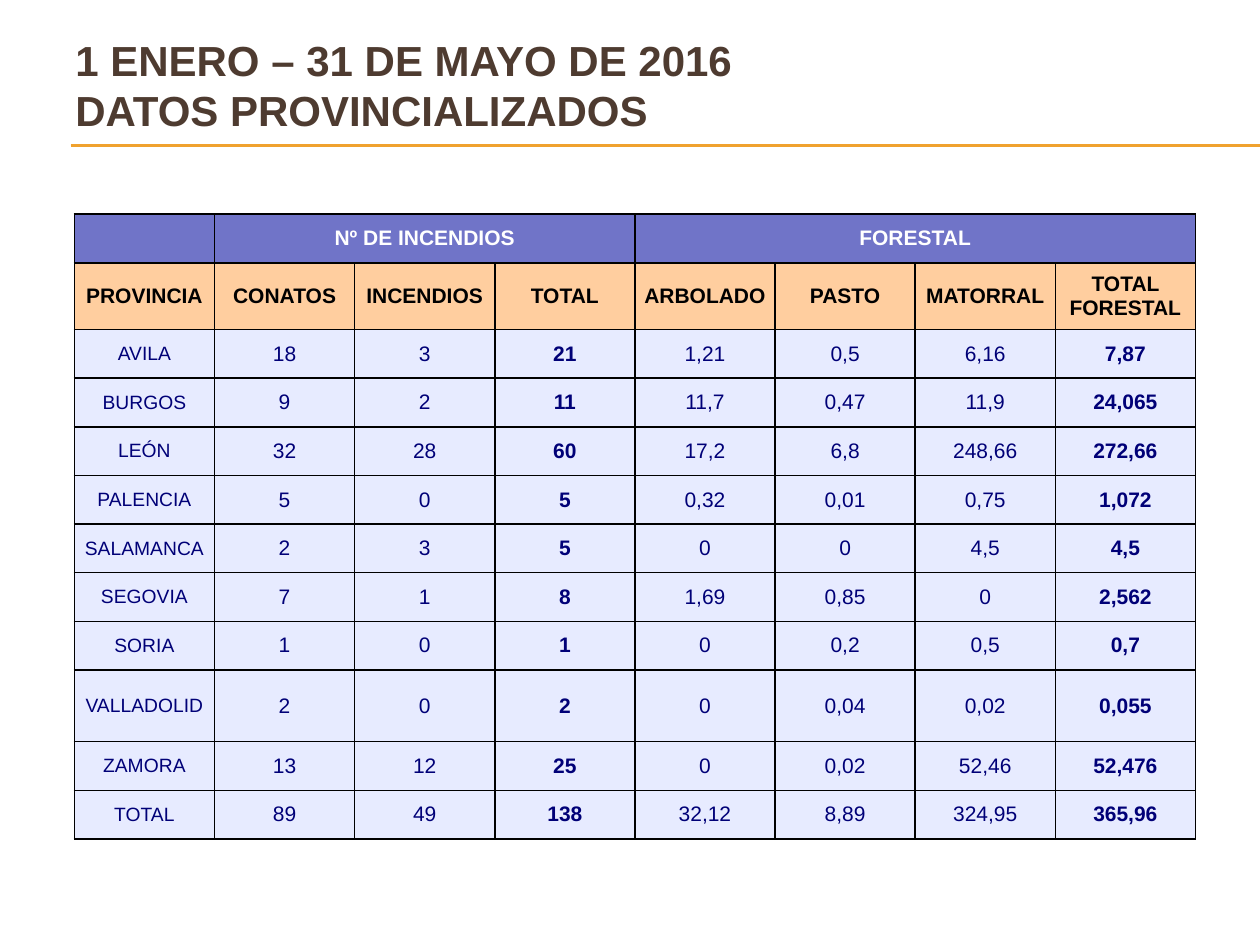
import pptx
import pptx.dml.color
import pptx.enum.shapes
import pptx.enum.text
import pptx.oxml.ns
import pptx.util
from lxml import etree

Inches, Pt = pptx.util.Inches, pptx.util.Pt
qn = pptx.oxml.ns.qn
MIDDLE = pptx.enum.text.MSO_ANCHOR.MIDDLE
CENTER = pptx.enum.text.PP_ALIGN.CENTER

TITLE = ["1 ENERO – 31 DE MAYO DE 2016", "DATOS PROVINCIALIZADOS"]
GROUPS = [("", 1), ("Nº DE INCENDIOS", 3), ("FORESTAL", 4)]
HEADS = ["PROVINCIA", "CONATOS", "INCENDIOS", "TOTAL",
         "ARBOLADO", "PASTO", "MATORRAL", "TOTAL FORESTAL"]
DATA = [
    ("AVILA", "18", "3", "21", "1,21", "0,5", "6,16", "7,87"),
    ("BURGOS", "9", "2", "11", "11,7", "0,47", "11,9", "24,065"),
    ("LEÓN", "32", "28", "60", "17,2", "6,8", "248,66", "272,66"),
    ("PALENCIA", "5", "0", "5", "0,32", "0,01", "0,75", "1,072"),
    ("SALAMANCA", "2", "3", "5", "0", "0", "4,5", "4,5"),
    ("SEGOVIA", "7", "1", "8", "1,69", "0,85", "0", "2,562"),
    ("SORIA", "1", "0", "1", "0", "0,2", "0,5", "0,7"),
    ("VALLADOLID", "2", "0", "2", "0", "0,04", "0,02", "0,055"),
    ("ZAMORA", "13", "12", "25", "0", "0,02", "52,46", "52,476"),
    ("TOTAL", "89", "49", "138", "32,12", "8,89", "324,95", "365,96"),
]
SUMS = (3, 7)                # bold columns
LEFT, TOP, WIDTH = 0.59, 1.7, 8.9
ROW = 0.386
TALL = {1: 0.53, 9: 0.57}    # rows that differ from ROW


def color(code):
    return pptx.dml.color.RGBColor.from_string(code)


def write(para, text, size, tint, bold):
    run = para.add_run()
    run.text = text
    font = run.font
    font.name, font.size, font.bold = "Arial", Pt(size), bold
    font.color.rgb = color(tint)


def rule(slide, y):
    line = slide.shapes.add_connector(
        pptx.enum.shapes.MSO_CONNECTOR.STRAIGHT,
        Inches(0.56), Inches(y), Inches(10), Inches(y))
    line.line.color.rgb = color("F0A22E")
    line.line.width = Pt(0.75)
    etree.SubElement(line._element.spPr, qn("a:effectLst"))


def frame(cell, tint="000000", width=1):
    """Draw the four borders of a cell."""
    props = cell._tc.get_or_add_tcPr()
    for side in ("a:lnL", "a:lnR", "a:lnT", "a:lnB"):
        edge = etree.SubElement(props, qn(side), w=str(Pt(width)))
        fill = etree.SubElement(edge, qn("a:solidFill"))
        etree.SubElement(fill, qn("a:srgbClr"), val=tint)


def style(cell, back):
    frame(cell)
    cell.fill.solid()
    cell.fill.fore_color.rgb = color(back)
    cell.vertical_anchor = MIDDLE
    cell.margin_left = cell.margin_right = 0
    cell.margin_top = cell.margin_bottom = 0


def put(cell, text, size, tint, bold):
    para = cell.text_frame.paragraphs[0]
    para.alignment = CENTER
    if text:
        write(para, text, size, tint, bold)


def add_title(slide):
    box = slide.shapes.add_textbox(
        Inches(0.5), Inches(0.21), Inches(9.5), Inches(0.92))
    body = box.text_frame
    body.word_wrap = True
    body.vertical_anchor = MIDDLE
    para = body.paragraphs[0]
    for i, text in enumerate(TITLE):
        if i:
            para.add_line_break()
        write(para, text, 24, "4E3B30", True)


def add_grid(slide):
    count = len(DATA) + 2
    highs = [TALL.get(r, ROW) for r in range(count)]
    grid = slide.shapes.add_table(
        count, len(HEADS), Inches(LEFT), Inches(TOP),
        Inches(WIDTH), Inches(sum(highs))).table
    for row, high in zip(grid.rows, highs):
        row.height = Inches(high)
    for r in range(count):
        back = ("7074C8", "FFCE9F")[r] if r < 2 else "E7EBFF"
        for c in range(len(HEADS)):
            style(grid.cell(r, c), back)

    start = 0
    for text, span in GROUPS:
        cell = grid.cell(0, start)
        if span > 1:
            cell.merge(grid.cell(0, start + span - 1))
        put(cell, text, 12, "FFFFFF", True)
        start += span
    for c, text in enumerate(HEADS):
        put(grid.cell(1, c), text, 12, "000000", True)
    for r, line in enumerate(DATA, 2):
        for c, text in enumerate(line):
            put(grid.cell(r, c), text, 12 if c else 11, "000077", c in SUMS)


def main():
    deck = pptx.Presentation()
    deck.slide_width, deck.slide_height = Inches(10), Inches(7.5)
    slide = deck.slides.add_slide(deck.slide_layouts[6])
    for y in (1.15, 1.16):
        rule(slide, y)
    add_title(slide)
    add_grid(slide)
    deck.save("out.pptx")


if __name__ == "__main__":
    main()
